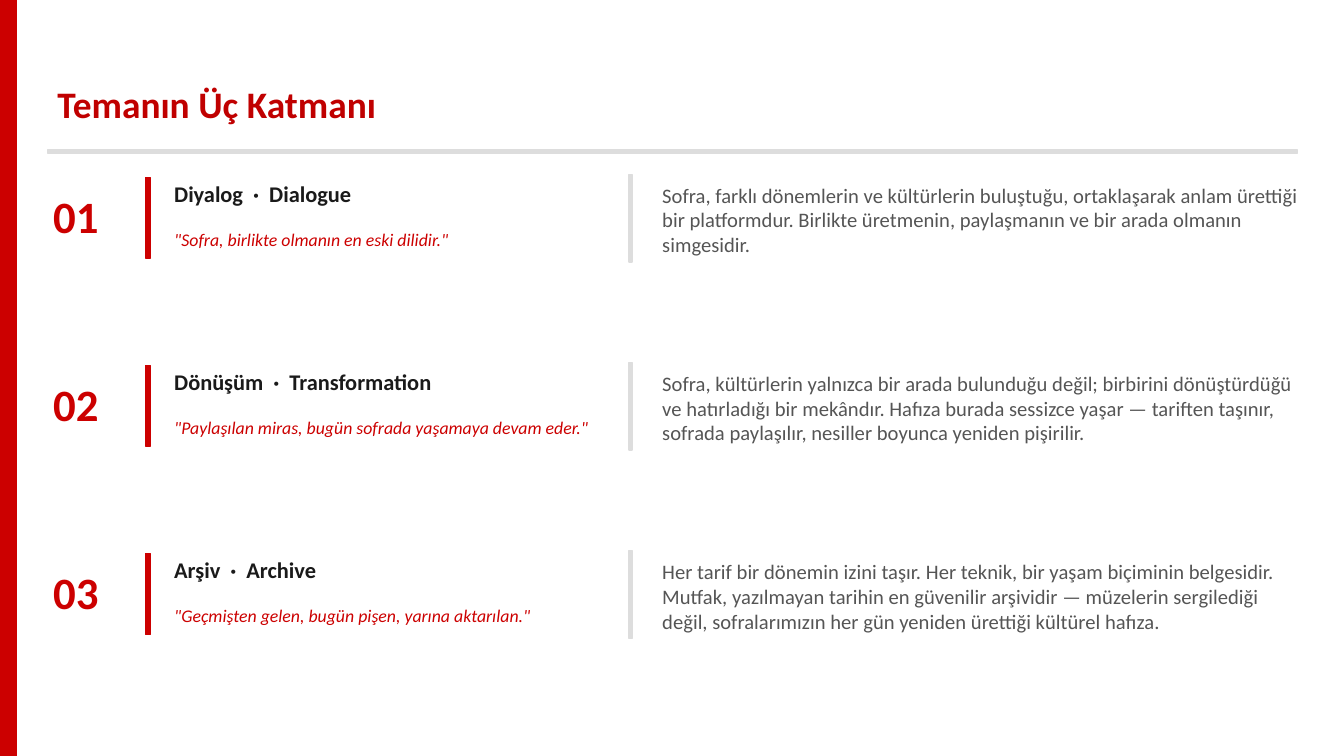
import dataclasses
import typing

import pptx
import pptx.dml.color
import pptx.enum.shapes
import pptx.enum.text
import pptx.util

Inches = pptx.util.Inches
Box = tuple[float, float, float, float]


@dataclasses.dataclass(frozen=True)
class Style:
    size: float
    color: str
    bold: bool = False
    italic: bool = False


@dataclasses.dataclass(frozen=True)
class Theme:
    font: str = "Calibri"
    red: str = "CC0000"
    gray: str = "DDDDDD"
    title: Style = Style(26.7, "C00000", bold=True)
    number: Style = Style(32, "CC0000", bold=True)
    name: Style = Style(16, "1A1A1A", bold=True)
    quote: Style = Style(12.7, "CC0000", italic=True)
    body: Style = Style(14.7, "555555")


@dataclasses.dataclass(frozen=True)
class Layer:
    name: str
    quote: str
    body: str


THEME = Theme()
FIRST = 1.67  # top of the first layer
PITCH = 5.6 / 3  # distance between layers

LAYERS = [
    Layer(
        "Diyalog  ·  Dialogue",
        '"Sofra, birlikte olmanın en eski dilidir."',
        "Sofra, farklı dönemlerin ve kültürlerin buluştuğu, ortaklaşarak anlam "
        "ürettiği bir platformdur. Birlikte üretmenin, paylaşmanın ve bir arada "
        "olmanın simgesidir.",
    ),
    Layer(
        "Dönüşüm  ·  Transformation",
        '"Paylaşılan miras, bugün sofrada yaşamaya devam eder."',
        "Sofra, kültürlerin yalnızca bir arada bulunduğu değil; birbirini "
        "dönüştürdüğü ve hatırladığı bir mekândır. Hafıza burada sessizce yaşar — "
        "tariften taşınır, sofrada paylaşılır, nesiller boyunca yeniden pişirilir.",
    ),
    Layer(
        "Arşiv  ·  Archive",
        '"Geçmişten gelen, bugün pişen, yarına aktarılan."',
        "Her tarif bir dönemin izini taşır. Her teknik, bir yaşam biçiminin "
        "belgesidir. Mutfak, yazılmayan tarihin en güvenilir arşividir — müzelerin "
        "sergilediği değil, sofralarımızın her gün yeniden ürettiği kültürel hafıza.",
    ),
]


def apply(target: typing.Any, values: dict[str, typing.Any]) -> None:
    for key, value in values.items():
        setattr(target, key, value)


def tint(code: str) -> pptx.dml.color.RGBColor:
    return pptx.dml.color.RGBColor.from_string(code)


def write(shape: typing.Any, text: str, style: Style) -> None:
    frame = shape.text_frame
    frame.text = text
    apply(frame, {
        "word_wrap": True,
        "auto_size": pptx.enum.text.MSO_AUTO_SIZE.NONE,
        "vertical_anchor": pptx.enum.text.MSO_ANCHOR.MIDDLE,
    })
    line = frame.paragraphs[0]
    line.alignment = pptx.enum.text.PP_ALIGN.LEFT
    font = line.runs[0].font
    apply(font, {
        "name": THEME.font,
        "size": pptx.util.Pt(style.size),
        "bold": style.bold,
        "italic": style.italic,
    })
    font.color.rgb = tint(style.color)


def label(slide: typing.Any, box: Box, text: str, style: Style) -> None:
    write(slide.shapes.add_textbox(*map(Inches, box)), text, style)


def bar(slide: typing.Any, box: Box, color: str) -> None:
    kind = pptx.enum.shapes.MSO_SHAPE.RECTANGLE
    shape = slide.shapes.add_shape(kind, *map(Inches, box))
    shape.shadow.inherit = False
    shape.fill.solid()
    shape.fill.fore_color.rgb = tint(color)
    shape.line.color.rgb = tint(color)
    shape.line.width = pptx.util.Pt(1)


def draw(slide: typing.Any, index: int, layer: Layer) -> None:
    top = FIRST + index * PITCH
    # Number and red mark
    label(slide, (0.43, top, 0.93, 0.93), f"{index + 1:02}", THEME.number)
    bar(slide, (1.44, top + 0.09, 0.05, 0.8), THEME.red)
    # Name and quote
    label(slide, (1.63, top + 0.01, 4.4, 0.48), layer.name, THEME.name)
    label(slide, (1.63, top + 0.49, 4.4, 0.43), layer.quote, THEME.quote)
    # Divider and body
    bar(slide, (6.24, top + 0.06, 0.03, 0.87), THEME.gray)
    label(slide, (6.47, top + 0.01, 6.53, 1), layer.body, THEME.body)


def main() -> None:
    deck = pptx.Presentation()
    apply(deck, {"slide_width": Inches(13.33), "slide_height": Inches(7.5)})
    slide = deck.slides.add_slide(deck.slide_layouts.get_by_name("Title Only"))

    # Side band, title and rule
    bar(slide, (0, 0, 0.16, 7.5), THEME.red)
    title = slide.shapes.title
    apply(title, {
        "left": Inches(0.47),
        "top": Inches(0.71),
        "width": Inches(12.4),
        "height": Inches(0.64),
    })
    write(title, "Temanın Üç Katmanı", THEME.title)
    bar(slide, (0.47, 1.49, 12.4, 0.03), THEME.gray)

    # Three layers
    for index, layer in enumerate(LAYERS):
        draw(slide, index, layer)

    deck.save("out.pptx")


if __name__ == "__main__":
    main()
